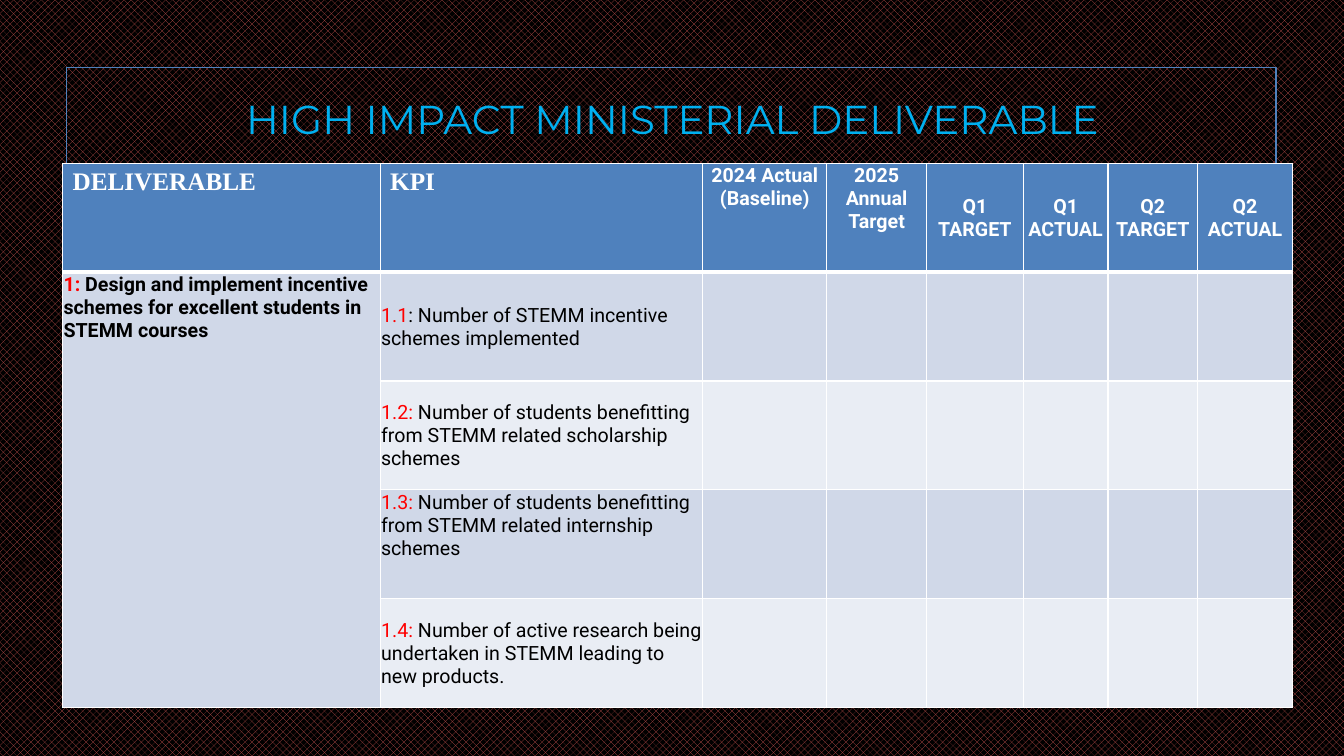
from lxml.etree import SubElement
from pptx import Presentation
from pptx.dml.color import RGBColor
from pptx.enum.dml import MSO_PATTERN
from pptx.enum.shapes import MSO_SHAPE
from pptx.enum.text import MSO_ANCHOR as ANCHOR, PP_ALIGN as ALIGN
from pptx.oxml.ns import qn
from pptx.util import Inches, Pt

BLUE, WHITE, BLACK, RED = "4F81BD", "FFFFFF", "000000", "FF0000"
BANDS = ["D0D8E8", "E9EDF4"]


def rgb(value):
    return RGBColor.from_string(value)


def add_run(p, text, size, font, color, bold=False):
    r = p.add_run()
    r.text = text
    r.font.size, r.font.name, r.font.bold = Pt(size), font, bold
    r.font.color.rgb = rgb(color)


prs = Presentation()
prs.slide_width, prs.slide_height = Inches(13.33), Inches(7.5)
s = prs.slides.add_slide(prs.slide_layouts[6])

# Patterned background
bg = s.background.fill
bg.patterned()
bg.pattern = MSO_PATTERN.PERCENT_50
bg.fore_color.rgb, bg.back_color.rgb = rgb("C0504D"), rgb(BLACK)

# Frame behind the table
frame = s.shapes.add_shape(MSO_SHAPE.RECTANGLE, Inches(0.66), Inches(0.67), Inches(12), Inches(6.17))
frame.shadow.inherit = False
frame.fill.background()
frame.line.color.rgb, frame.line.width = rgb(BLUE), Pt(1.25)

# Title
title = s.shapes.add_textbox(Inches(1.42), Inches(0.73), Inches(10.5), Inches(0.89))
tf = title.text_frame
tf.word_wrap, tf.vertical_anchor = True, ANCHOR.MIDDLE
tf.paragraphs[0].alignment = ALIGN.CENTER
add_run(tf.paragraphs[0], "HIGH IMPACT MINISTERIAL DELIVERABLE", 28.8, "Montserrat", "00B0F0")

# Table grid
widths = [3.15, 3.2, 1.23, 0.99, 0.96, 0.84, 0.89, 0.94]
table = s.shapes.add_table(5, len(widths), Inches(0.62), Inches(1.62), Inches(12.21), Inches(5.4)).table
for col, width in zip(table.columns, widths):
    col.width = Inches(width)
for row in table.rows:
    row.height = Inches(1.08)
table.cell(1, 0).merge(table.cell(4, 0))

# Cell borders, fills and margins
for i in range(5):
    for j in range(len(widths)):
        cell = table.cell(i, j)
        heavy = {0: "lnB", 1: "lnT"}.get(i)
        tcPr = cell._tc.get_or_add_tcPr()
        for side in ("lnL", "lnR", "lnT", "lnB"):
            ln = SubElement(tcPr, qn(f"a:{side}"), w=str(Pt(3 if side == heavy else 1)))
            SubElement(SubElement(ln, qn("a:solidFill")), qn("a:srgbClr"), val=WHITE)
        cell.fill.solid()
        band = BANDS[0] if j == 0 else BANDS[(i - 1) % 2]
        cell.fill.fore_color.rgb = rgb(BLUE if i == 0 else band)
        if i > 0 or j > 1:
            cell.margin_left = cell.margin_right = cell.margin_top = Inches(0.01)
            cell.margin_bottom = 0

# Header row
headers = ["DELIVERABLE", "KPI", "2024 Actual (Baseline)", "2025 Annual Target",
           "Q1 TARGET", "Q1 ACTUAL", "Q2 TARGET", "Q2 ACTUAL"]
for j, text in enumerate(headers):
    cell = table.cell(0, j)
    cell.vertical_anchor = ANCHOR.MIDDLE if j > 3 else ANCHOR.TOP
    p = cell.text_frame.paragraphs[0]
    p.alignment = ALIGN.CENTER if j > 1 else ALIGN.LEFT
    size, font = (14, "Roboto") if j > 1 else (18, "Times New Roman")
    add_run(p, text, size, font, WHITE, True)

# Deliverable and its KPIs: row, column, number, text, anchor
entries = [
    (1, 0, "1: ", "Design and implement incentive schemes for excellent students in STEMM courses", ANCHOR.TOP),
    (1, 1, "1.1", ": Number of STEMM incentive schemes implemented", ANCHOR.MIDDLE),
    (2, 1, "1.2:", " Number of students benefitting from STEMM related scholarship schemes", ANCHOR.MIDDLE),
    (3, 1, "1.3:", " Number of students benefitting from STEMM related internship schemes", ANCHOR.TOP),
    (4, 1, "1.4:", " Number of active research being undertaken in STEMM leading to new products.", ANCHOR.MIDDLE),
]
for i, j, number, text, anchor in entries:
    cell = table.cell(i, j)
    cell.vertical_anchor = anchor
    p = cell.text_frame.paragraphs[0]
    add_run(p, number, 14, "Roboto", RED, j == 0)
    add_run(p, text, 14, "Roboto", BLACK, j == 0)

prs.save("out.pptx")
